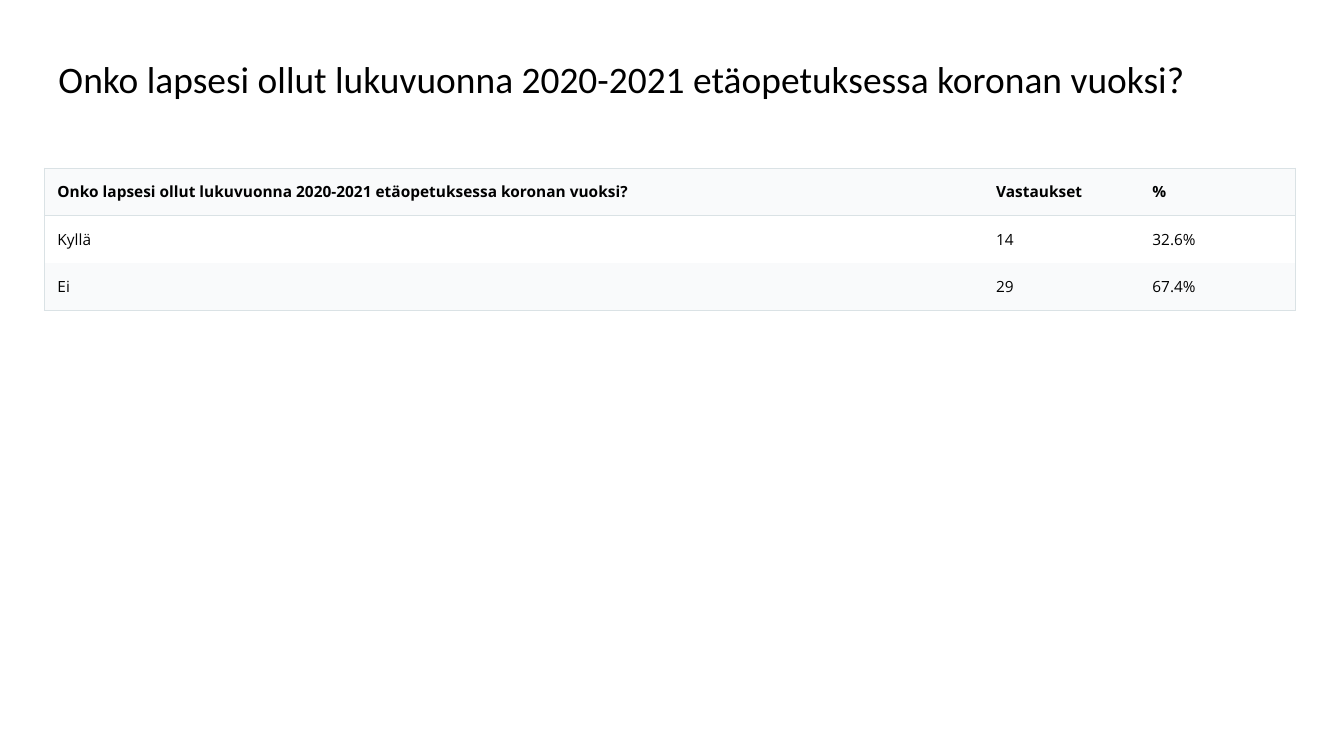
from lxml import etree
from pptx import Presentation
from pptx.dml.color import RGBColor
from pptx.enum.text import MSO_ANCHOR
from pptx.oxml.ns import qn
from pptx.util import Inches, Pt

COLOURS = {"text": "000000", "border": "DAE2E5", "shaded": "F9FAFB", "plain": "FFFFFF"}
QUESTION = "Onko lapsesi ollut lukuvuonna 2020-2021 etäopetuksessa koronan vuoksi?"
ANSWERS = [
    (QUESTION, "Vastaukset", "%"),
    ("Kyllä", "14", "32.6%"),
    ("Ei", "29", "67.4%"),
]
COLUMN_WIDTHS = [9.31, 1.55, 1.55]
ROW_HEIGHT = 0.47
MARGIN = Inches(0.13)


def colour(name):
    return RGBColor.from_string(COLOURS[name])


def set_margins(box):
    box.margin_left = box.margin_right = MARGIN
    box.margin_top = box.margin_bottom = MARGIN


def add_run(paragraph, text, font_name, size, bold=False):
    run = paragraph.add_run()
    run.text = text
    run.font.name = font_name
    run.font.size = Pt(size)
    run.font.bold = bold
    run.font.color.rgb = colour("text")


def add_title(slide, text):
    shape = slide.shapes.add_textbox(Inches(0.45), Inches(0.39), Inches(12.42), Inches(0.84))
    frame = shape.text_frame
    frame.word_wrap = True
    frame.vertical_anchor = MSO_ANCHOR.MIDDLE
    set_margins(frame)
    paragraph = frame.paragraphs[0]
    paragraph.line_spacing = 0.9
    add_run(paragraph, text, "Calibri", 26.7)


def set_borders(cell, visible_sides):
    properties = cell._tc.get_or_add_tcPr()
    for index, side in enumerate("LRTB"):
        line = etree.Element(qn(f"a:ln{side}"), w=str(Pt(1)))
        if side in visible_sides:
            fill = etree.SubElement(line, qn("a:solidFill"))
            etree.SubElement(fill, qn("a:srgbClr"), val=COLOURS["border"])
        else:
            etree.SubElement(line, qn("a:noFill"))
        properties.insert(index, line)


def border_sides(row, column):
    """Outline the table and rule off the header."""
    last_row, last_column = len(ANSWERS) - 1, len(COLUMN_WIDTHS) - 1
    rules = {
        "L": column == 0,
        "R": column == last_column,
        "T": row in (0, 1),
        "B": row in (0, last_row),
    }
    return [side for side, visible in rules.items() if visible]


def add_answer_table(slide):
    frame = slide.shapes.add_table(
        len(ANSWERS), len(COLUMN_WIDTHS), Inches(0.44), Inches(1.67),
        Inches(sum(COLUMN_WIDTHS)), Inches(ROW_HEIGHT * len(ANSWERS)))
    table = frame.table
    table.first_row = table.horz_banding = False
    for column, width in zip(table.columns, COLUMN_WIDTHS):
        column.width = Inches(width)
    for row_index, answers in enumerate(ANSWERS):
        table.rows[row_index].height = Inches(ROW_HEIGHT)
        for column_index, text in enumerate(answers):
            cell = table.cell(row_index, column_index)
            set_margins(cell)
            cell.fill.solid()
            cell.fill.fore_color.rgb = colour("plain" if row_index % 2 else "shaded")
            set_borders(cell, border_sides(row_index, column_index))
            add_run(cell.text_frame.paragraphs[0], text, "Open Sans", 11, bold=row_index == 0)


def main():
    presentation = Presentation()
    presentation.slide_width = Inches(13.33)
    presentation.slide_height = Inches(7.5)
    slide = presentation.slides.add_slide(presentation.slide_layouts[6])

    # Question heading
    add_title(slide, QUESTION)

    # Answer counts and shares
    add_answer_table(slide)

    presentation.save("out.pptx")


if __name__ == "__main__":
    main()
